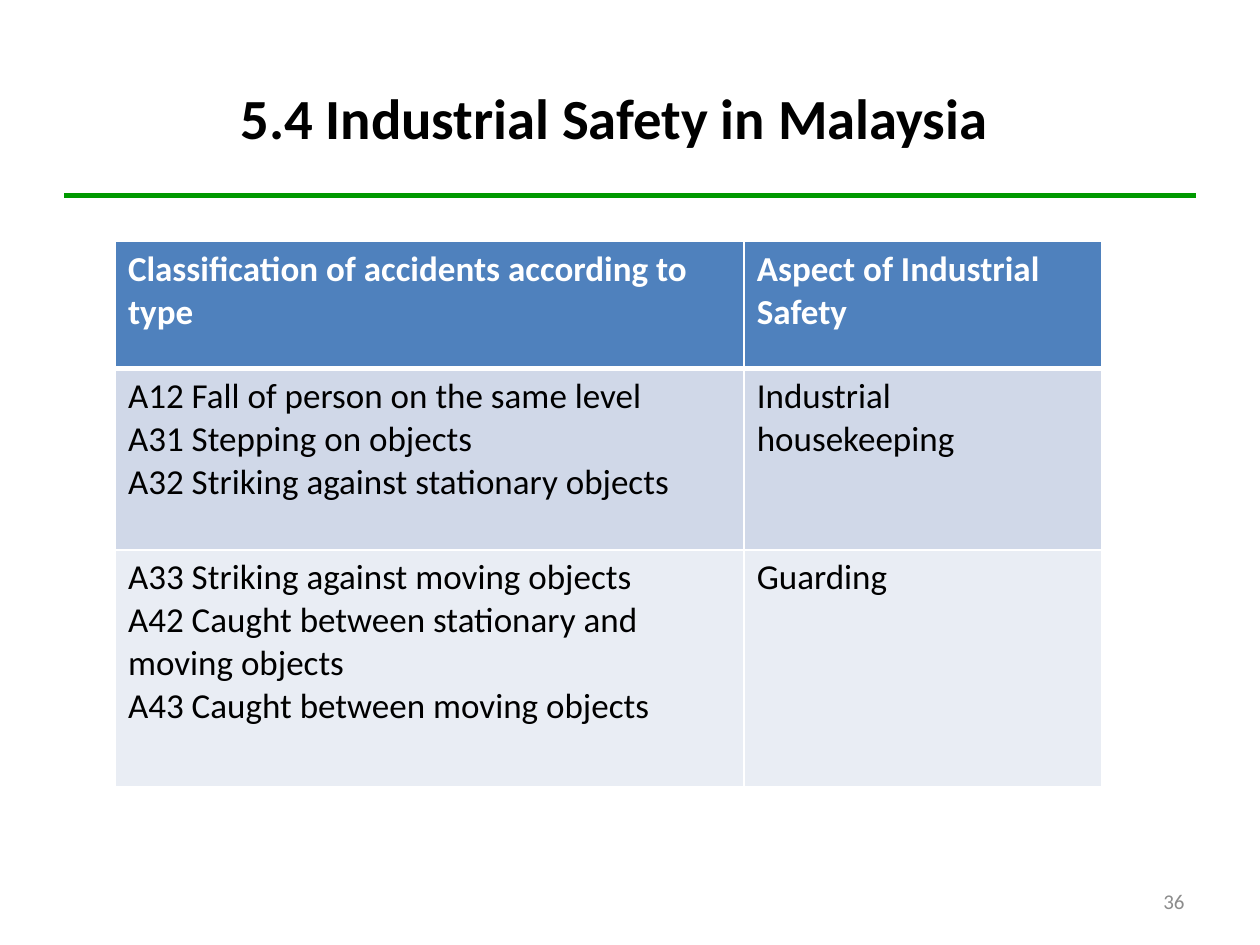
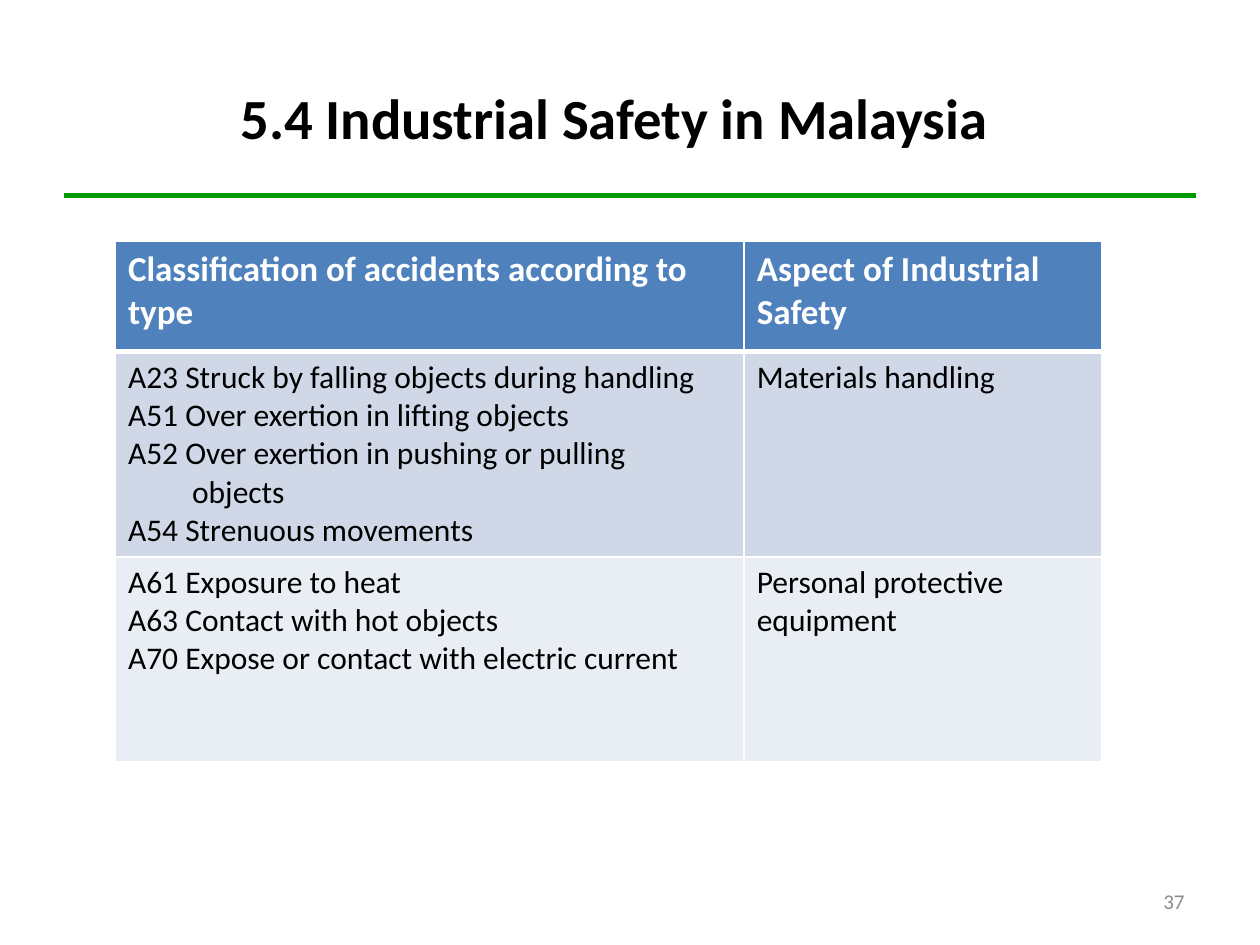
from lxml import etree
from pptx import Presentation
from pptx.dml.color import RGBColor
from pptx.enum import shapes, text
from pptx.oxml.ns import qn
from pptx.util import Pt

TITLE = "5.4 Industrial Safety in Malaysia"
HEADS = ["Classification of accidents according to type",
         "Aspect of Industrial Safety"]

# A leading tab marks a line that continues the one above.
PAGES = [
    {"number": 36, "size": 20, "heights": [72.7, 103.7, 135.3], "rows": [
        (["A12 Fall of person on the same level",
          "A31 Stepping on objects",
          "A32 Striking against stationary objects"],
         "Industrial housekeeping"),
        (["A33 Striking against moving objects",
          "A42 Caught between stationary and moving objects",
          "A43 Caught between moving objects"],
         "Guarding")]},
    {"number": 37, "size": 18, "heights": [63, 117.2, 117.2], "rows": [
        (["A23 Struck by falling objects during handling",
          "A51 Over exertion in lifting objects",
          "A52 Over exertion in pushing or pulling",
          "\tobjects",
          "A54 Strenuous movements"],
         "Materials handling"),
        (["A61 Exposure to heat",
          "A63 Contact with hot objects",
          "A70 Expose or contact with electric current"],
         "Personal protective equipment")]},
]

FONT = "Calibri"
BLACK, WHITE, GREY = "000000", "FFFFFF", "8C8C8C"
GREEN, BLUE = "009900", "4F81BD"
BANDS = ["D0D8E8", "E9EDF4"]
WIDTHS = [359.3, 204.5]
INDENT = 36.6


def tint(color, code):
    color.rgb = RGBColor.from_string(code)


def style(para, size, code, bold=False):
    for run in para.runs:
        font = run.font
        font.name, font.size, font.bold = FONT, Pt(size), bold
        tint(font.color, code)


def label(slide, box, words, align, size, code, bold=False):
    """Add one line of text, centred vertically in its box."""
    frame = slide.shapes.add_textbox(*map(Pt, box)).text_frame
    frame.word_wrap = True
    frame.vertical_anchor = text.MSO_ANCHOR.MIDDLE
    frame.text = words
    frame.paragraphs[0].alignment = align
    style(frame.paragraphs[0], size, code, bold)


def rule(slide):
    line = slide.shapes.add_connector(shapes.MSO_CONNECTOR.STRAIGHT,
                                      Pt(36.7), Pt(111.6), Pt(683.3), Pt(111.6))
    tint(line.line.color, GREEN)
    line.line.width = Pt(3)
    etree.SubElement(line._element.spPr, qn("a:effectLst"))


def edge(cell, top, bottom):
    """Draw white cell borders, with the given widths above and below."""
    props = cell._tc.get_or_add_tcPr()
    for side, width in zip("LRTB", (1, 1, top, bottom)):
        line = etree.SubElement(props, qn("a:ln" + side), w=str(Pt(width)))
        fill = etree.SubElement(line, qn("a:solidFill"))
        etree.SubElement(fill, qn("a:srgbClr"), val=WHITE)


def put(cell, lines, size, code, bold, fill):
    cell.fill.solid()
    tint(cell.fill.fore_color, fill)
    cell.text_frame.text = "\n".join(line.strip() for line in lines)
    for line, para in zip(lines, cell.text_frame.paragraphs):
        style(para, size, code, bold)
        if line.startswith("\t"):
            para._p.get_or_add_pPr().set("marL", str(Pt(INDENT)))


def grid(slide, page):
    rows = [([HEADS[0]], HEADS[1])] + page["rows"]
    table = slide.shapes.add_table(
        len(rows), len(WIDTHS), Pt(66), Pt(138),
        Pt(sum(WIDTHS)), Pt(sum(page["heights"]))).table
    for col, width in zip(table.columns, WIDTHS):
        col.width = Pt(width)
    for i, (kinds, aspect) in enumerate(rows):
        table.rows[i].height = Pt(page["heights"][i])
        if i == 0:
            look = (20, WHITE, True, BLUE)
        else:
            look = (page["size"], BLACK, False, BANDS[(i - 1) % 2])
        for j, lines in enumerate((kinds, [aspect])):
            cell = table.cell(i, j)
            edge(cell, 3 if i == 1 else 1, 3 if i == 0 else 1)
            put(cell, lines, *look)


def main():
    deck = Presentation()
    deck.slide_width, deck.slide_height = Pt(720), Pt(540)
    for page in PAGES:
        slide = deck.slides.add_slide(deck.slide_layouts[6])
        rule(slide)
        label(slide, (18, 21.6, 666, 90), TITLE,
              text.PP_ALIGN.CENTER, 32.4, BLACK, True)
        label(slide, (516, 500.5, 168, 28.8), str(page["number"]),
              text.PP_ALIGN.RIGHT, 12, GREY)
        grid(slide, page)
    deck.save("out.pptx")


if __name__ == "__main__":
    main()
